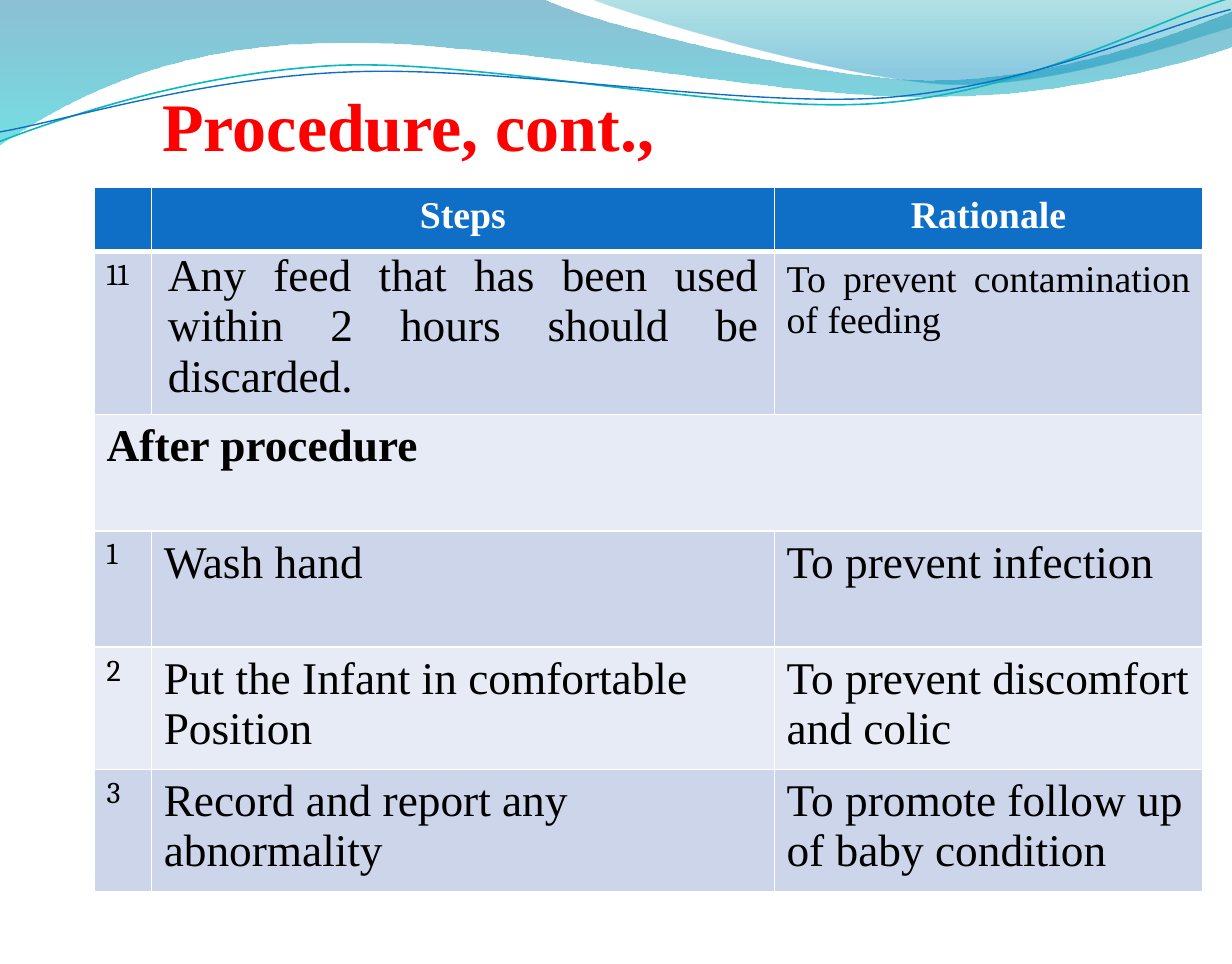
from dataclasses import dataclass

from lxml.etree import SubElement
from pptx import Presentation
from pptx.dml.color import RGBColor
from pptx.enum.text import MSO_ANCHOR as Anchor, PP_ALIGN as Align
from pptx.oxml.ns import qn
from pptx.util import Inches, Pt

COLUMNS, ROWS = 90.6, 70.9


@dataclass(frozen=True)
class Theme:
    serif: str = "Times New Roman"
    number_font: str = "Cambria"
    title: str = "FF0000"
    header: str = "0F6FC6"
    light: str = "FFFFFF"
    dark: str = "000000"
    bands: tuple = ("CCD5EA", "E7EBF5")
    teal_line: str = "0AB8BF"
    title_size: int = 36
    body_size: int = 24
    small_size: int = 20
    number_size: int = 16


THEME = Theme()

# A wave is a start point, then segments: one point is straight, three are a cubic curve.
BACK_WAVE = ((0, 0), [
    ((39.9, -0.1),),
    ((43.1, 1.6), (60.1, 5.9), (68.7, 5.9)),
    ((77.3, 5.9), (86.8, 2.4), (90.6, 0.8)),
    ((90.6, 3.4),),
    ((89, 4.1), (78.8, 7.2), (67.5, 7.1)),
    ((56.3, 7.1), (34.6, 2.6), (23.3, 3.2)),
    ((11.7, 3.4), (4.2, 7.8), (-0.1, 10.7)),
    ((0, 0),),
])
FRONT_WAVE = ((43.4, -0.1), [
    ((46.1, 1.1), (61.8, 5.8), (69.6, 6.2)),
    ((77.5, 6.5), (87.1, 3), (90.6, 2)),
    ((90.6, 0),),
    ((43.4, -0.1),),
])
TEAL_LINE = ((0, 10.4), [
    ((4.4, 8.7), (14.3, 5.3), (25, 4.8)),
    ((35.8, 4.4), (53.7, 8.4), (64.6, 7.6)),
    ((75.4, 6.8), (85, 1.5), (90.3, -0.1)),
])
BLUE_LINE = ((0, 9.7), [
    ((4.3, 9), (14.8, 5.7), (25.6, 5.3)),
    ((36.5, 4.8), (54.1, 7.9), (64.9, 7.2)),
    ((75.7, 6.4), (85.2, 2), (90.5, 0.7)),
])

TABLE_COLUMNS = (4.2, 45.8, 31.5)
TABLE_ROWS = (4.7, 11.05, 8.55, 8.55, 8.55, 8.55)
HEADINGS = ("", "Steps", "Rationale")
SECTION = "After procedure"
STEPS = (
    ("11", "Any feed that has been used within 2 hours should be discarded.",
     "To prevent contamination of feeding"),
    (SECTION, "", ""),
    ("1", "Wash hand", "To prevent infection"),
    ("2", "Put the Infant in comfortable Position", "To prevent discomfort and colic"),
    ("3", "Record and report any abnormality", "To promote follow up of baby condition"),
)


def grid(units):
    return Inches(units / 10)


def color(value):
    return RGBColor.from_string(value)


def write_text(frame, text, size=THEME.body_size, font=THEME.serif, ink=THEME.dark,
               bold=False, align=Align.LEFT):
    paragraph = frame.paragraphs[0]
    paragraph.alignment = align
    run = paragraph.add_run()
    run.text = text
    run.font.size = Pt(size)
    run.font.name = font
    run.font.bold = bold
    run.font.color.rgb = color(ink)


def add_outline(slide, wave, close):
    """Draw every point as a straight step, then join each group of three into a curve."""
    start, segments = wave
    builder = slide.shapes.build_freeform(grid(start[0]), grid(start[1]))
    for segment in segments:
        builder.add_line_segments([(grid(x), grid(y)) for x, y in segment], close=False)
    if close:
        builder.add_line_segments([], close=True)
    shape = builder.convert_to_shape()
    shape.shadow.inherit = False
    steps = iter(list(shape.element.spPr.iter(qn("a:lnTo"))))
    for segment in segments:
        group = [next(steps) for _ in segment]
        if len(group) == 3:
            curve = group[0].makeelement(qn("a:cubicBezTo"))
            group[0].addprevious(curve)
            for step in group:
                curve.append(step[0])
                step.getparent().remove(step)
    return shape


def add_wave(slide, wave, stops):
    """Fill a wave from top to bottom; each stop is position, colour, opacity in percent."""
    shape = add_outline(slide, wave, close=True)
    shape.line.fill.background()
    shape.fill.gradient()
    shape.fill.gradient_angle = 270
    for stop, (position, value, _) in zip(shape.fill.gradient_stops, stops):
        stop.position = position
        stop.color.rgb = color(value)
    for node, (_, _, opacity) in zip(shape.element.spPr.iter(qn("a:srgbClr")), stops):
        SubElement(node, qn("a:alpha")).set("val", str(opacity * 1000))


def add_wave_line(slide, wave, value, width):
    shape = add_outline(slide, wave, close=False)
    shape.fill.background()
    shape.line.color.rgb = color(value)
    shape.line.width = Pt(width)


def add_title(slide, text):
    box = slide.shapes.add_textbox(grid(11.95), grid(0.8), grid(COLUMNS - 11.95), grid(11.8))
    frame = box.text_frame
    frame.word_wrap = True
    frame.vertical_anchor = Anchor.BOTTOM
    frame.margin_left = frame.margin_right = 0
    write_text(frame, text, THEME.title_size, ink=THEME.title, bold=True)


def add_borders(cell, bottom):
    properties = cell._tc.get_or_add_tcPr()
    for place, (side, width) in enumerate((("L", 1), ("R", 1), ("T", 1), ("B", bottom))):
        line = properties.makeelement(qn(f"a:ln{side}"), {"w": str(Pt(width))})
        fill = SubElement(line, qn("a:solidFill"))
        SubElement(fill, qn("a:srgbClr")).set("val", THEME.light)
        properties.insert(place, line)


def fill_cell(cell, fill, text, margins=(0.9, 0.5), bottom=1, **text_format):
    cell.fill.solid()
    cell.fill.fore_color.rgb = color(fill)
    add_borders(cell, bottom)
    cell.margin_left = cell.margin_right = grid(margins[0])
    cell.margin_top = cell.margin_bottom = grid(margins[1])
    if text:
        write_text(cell.text_frame, text, **text_format)


def cell_format(row, column):
    if STEPS[row][0] == SECTION:
        return dict(bold=True)
    if column == 0:
        return dict(size=THEME.number_size, font=THEME.number_font)
    if row == 0 and column == 1:
        return dict(align=Align.JUSTIFY, margins=(1.2, 0))
    if row == 0:
        return dict(align=Align.JUSTIFY, size=THEME.small_size)
    return {}


def add_procedure_table(slide):
    frame = slide.shapes.add_table(len(TABLE_ROWS), len(TABLE_COLUMNS), grid(6.95), grid(13.8),
                                   grid(sum(TABLE_COLUMNS)), grid(sum(TABLE_ROWS)))
    table = frame.table
    for column, width in zip(table.columns, TABLE_COLUMNS):
        column.width = grid(width)
    for row, height in zip(table.rows, TABLE_ROWS):
        row.height = grid(height)
    for column, heading in enumerate(HEADINGS):
        fill_cell(table.cell(0, column), THEME.header, heading, bottom=3, size=THEME.small_size,
                  ink=THEME.light, bold=True, align=Align.CENTER)
    for row, texts in enumerate(STEPS):
        for column, text in enumerate(texts):
            fill_cell(table.cell(row + 1, column), THEME.bands[row % 2], text,
                      **cell_format(row, column))
        if texts[0] == SECTION:
            table.cell(row + 1, 0).merge(table.cell(row + 1, len(texts) - 1))


def main():
    presentation = Presentation()
    presentation.slide_width, presentation.slide_height = grid(COLUMNS), grid(ROWS)
    slide = presentation.slides.add_slide(presentation.slide_layouts[6])
    add_wave(slide, BACK_WAVE, ((0, "0074A1", 45), (1, "00C6CF", 55)))
    add_wave(slide, FRONT_WAVE, ((0, "00A1A9", 30), (0.8, "008BBF", 45)))
    add_wave_line(slide, TEAL_LINE, THEME.teal_line, 0.85)
    add_wave_line(slide, BLUE_LINE, THEME.header, 0.75)
    add_title(slide, "Procedure, cont.,")
    add_procedure_table(slide)
    presentation.save("out.pptx")


if __name__ == "__main__":
    main()
